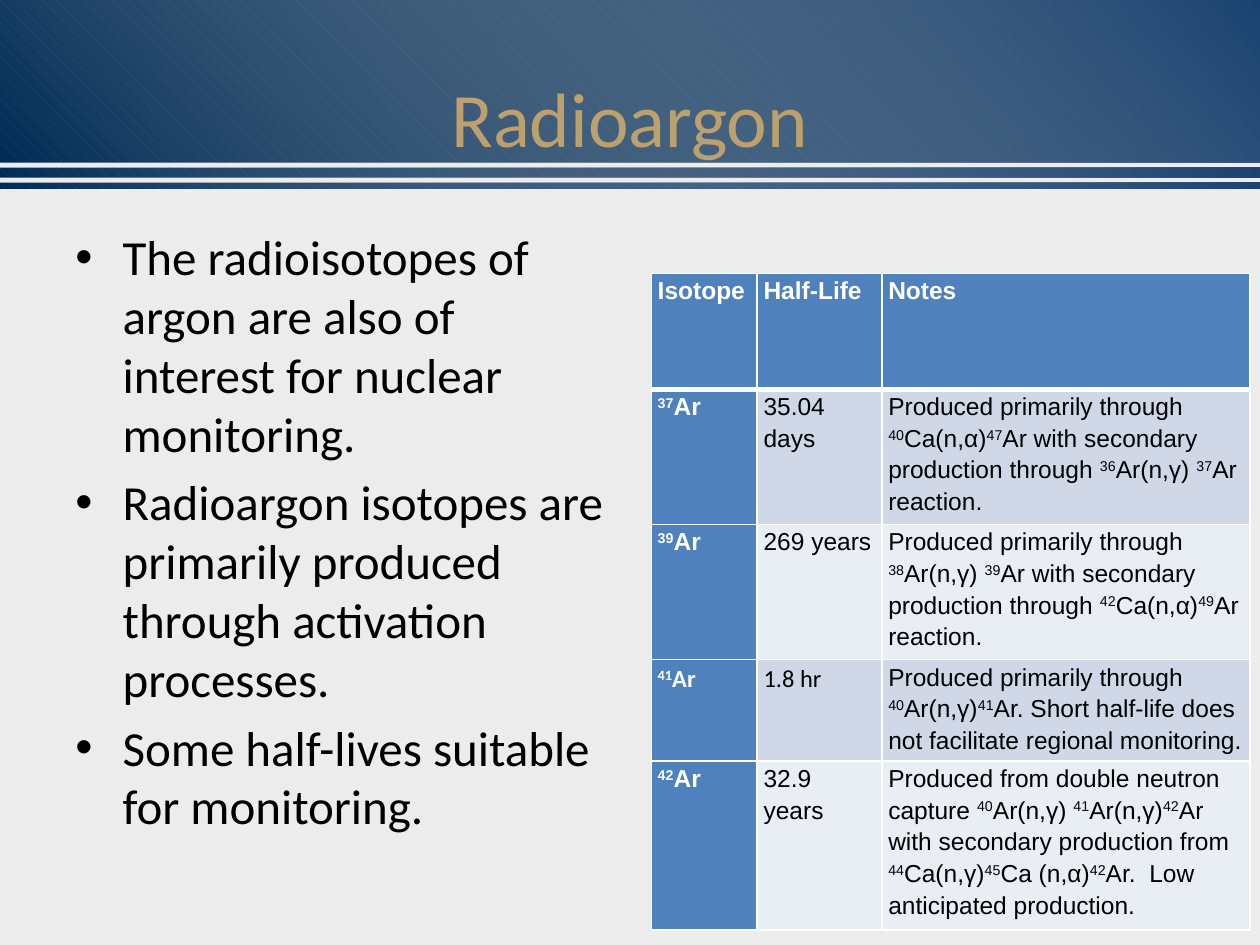
"""Builds the Radioargon slide: banded header, bullet list and isotope table."""
from lxml.etree import SubElement
from pptx import Presentation
from pptx.dml.color import RGBColor
from pptx.enum.dml import MSO_PATTERN
from pptx.enum.shapes import MSO_SHAPE
from pptx.enum.text import MSO_ANCHOR, PP_ALIGN
from pptx.oxml.ns import qn
from pptx.util import Inches, Pt

NAVY = RGBColor(0x00, 0x2B, 0x55)
BLUE = RGBColor(0x1C, 0x43, 0x72)
CREAM = RGBColor(0xEE, 0xEC, 0xE1)
GOLD = RGBColor(0xBC, 0xA0, 0x6E)
BLACK = RGBColor(0x00, 0x00, 0x00)
WHITE = RGBColor(0xFF, 0xFF, 0xFF)
HEADER_BLUE = RGBColor(0x4F, 0x81, 0xBD)
BAND_COLORS = [RGBColor(0xE9, 0xED, 0xF4), RGBColor(0xD0, 0xD8, 0xE8)]
PAPER = RGBColor(0xEC, 0xEC, 0xEC)
PAPER_LINE = RGBColor(0xF2, 0xF2, 0xF2)

presentation = Presentation()
presentation.slide_width = Inches(10)
presentation.slide_height = Inches(7.5)
COLUMN = presentation.slide_width / 100
ROW = presentation.slide_height / 75
slide = presentation.slides.add_slide(presentation.slide_layouts[6])


def set_pattern(fill, pattern, front, back):
    fill.patterned()
    fill.pattern = pattern
    fill.fore_color.rgb = front
    fill.back_color.rgb = back


def add_text_box(left, top, width, height, lines, size, color):
    box = slide.shapes.add_textbox(
        int(left * COLUMN), int(top * ROW), int(width * COLUMN), int(height * ROW))
    frame = box.text_frame
    frame.word_wrap = True
    frame.text = "\n".join(lines)
    for paragraph in frame.paragraphs:
        font = paragraph.runs[0].font
        font.name = "Calibri"
        font.size = Pt(size)
        font.color.rgb = color
    return frame


set_pattern(slide.background.fill, MSO_PATTERN.WIDE_UPWARD_DIAGONAL, PAPER_LINE, PAPER)

for band_top, band_height in [(0, 12.9), (13.3, 0.8), (14.5, 0.5)]:
    width, height = int(100 * COLUMN), int(band_height * ROW)
    top = int(band_top * ROW)
    band = slide.shapes.add_shape(MSO_SHAPE.RECTANGLE, 0, top, width, height)
    set_pattern(band.fill, MSO_PATTERN.SHINGLE, BLUE, NAVY)
    sheen = slide.shapes.add_shape(
        MSO_SHAPE.RECTANGLE, (width - height) // 2, top + (height - width) // 2, height, width)
    sheen.rotation = 90
    sheen.fill.gradient()
    sheen.fill.gradient_angle = 130
    for stop, color in zip(sheen.fill.gradient_stops, [CREAM, BLUE]):
        stop.color.rgb = color
    clear_color = next(sheen._element.spPr.iter(qn("a:srgbClr")))
    SubElement(clear_color, qn("a:alpha"), val="0")
    for shape in (band, sheen):
        shape.line.fill.background()
        shape.shadow.inherit = False

title = add_text_box(5, 3, 90, 12.5, ["Radioargon"], 44, GOLD)
title.vertical_anchor = MSO_ANCHOR.MIDDLE
title.paragraphs[0].alignment = PP_ALIGN.CENTER

body = add_text_box(5, 17.5, 44.2, 49.5, [
    "The radioisotopes of argon are also of interest for nuclear monitoring.",
    "Radioargon isotopes are primarily produced through activation processes.",
    "Some half-lives suitable for monitoring.",
], 28, BLACK)
for index, paragraph in enumerate(body.paragraphs):
    paragraph.space_before = Pt(5.6 if index else 0)
    properties = paragraph._p.get_or_add_pPr()
    properties.set("marL", str(int(3.75 * COLUMN)))
    properties.set("indent", str(int(-3.75 * COLUMN)))
    SubElement(properties, qn("a:buFont"), typeface="Arial")
    SubElement(properties, qn("a:buChar"), char="•")

ISOTOPES = [
    ("Isotope", "Half-Life", "Notes"),
    ("^37^Ar", "35.04 days",
     "Produced primarily through ^40^Ca(n,α)^47^Ar with secondary production "
     "through ^36^Ar(n,γ) ^37^Ar reaction."),
    ("^39^Ar", "269 years",
     "Produced primarily through ^38^Ar(n,γ) ^39^Ar with secondary production "
     "through ^42^Ca(n,α)^49^Ar reaction."),
    ("^41^Ar", "1.8 hr",
     "Produced primarily through ^40^Ar(n,γ)^41^Ar. Short half-life does not "
     "facilitate regional monitoring."),
    ("^42^Ar", "32.9 years",
     "Produced from double neutron capture ^40^Ar(n,γ) ^41^Ar(n,γ)^42^Ar with "
     "secondary production from ^44^Ca(n,γ)^45^Ca (n,α)^42^Ar.  Low anticipated production."),
]
CALIBRI_CELLS = {(3, 0), (3, 1)}
column_widths = [8.4, 9.9, 29.2]
row_heights = [9.2, 6, 6, 7.5, 7.5]

table = slide.shapes.add_table(
    len(row_heights), len(column_widths), int(51.7 * COLUMN), int(21.7 * ROW),
    int(sum(column_widths) * COLUMN), int(sum(row_heights) * ROW)).table
table.horz_banding = False
for table_column, width in zip(table.columns, column_widths):
    table_column.width = int(width * COLUMN)
for table_row, height in zip(table.rows, row_heights):
    table_row.height = int(height * ROW)

for row_index, texts in enumerate(ISOTOPES):
    for column_index, text in enumerate(texts):
        cell = table.cell(row_index, column_index)
        is_heading = row_index == 0 or column_index == 0
        cell.margin_left = cell.margin_right = int(0.5 * COLUMN)
        cell.margin_top = cell.margin_bottom = 0
        for side in ("lnL", "lnR", "lnT", "lnB"):
            is_thick = (row_index, side) in {(0, "lnB"), (1, "lnT")}
            border = SubElement(cell._tc.get_or_add_tcPr(), qn(f"a:{side}"),
                                w=str(Pt(3 if is_thick else 1)))
            border_fill = SubElement(border, qn("a:solidFill"))
            SubElement(border_fill, qn("a:srgbClr"), val=str(WHITE))
        cell.fill.solid()
        cell.fill.fore_color.rgb = HEADER_BLUE if is_heading else BAND_COLORS[row_index % 2]
        paragraph = cell.text_frame.paragraphs[0]
        paragraph.line_spacing = 1.15
        for part_index, part in enumerate(text.split("^")):
            if not part:
                continue
            run = paragraph.add_run()
            run.text = part
            font = run.font
            font.name = "Calibri" if (row_index, column_index) in CALIBRI_CELLS else "Arial"
            font.size = Pt(14)
            font.bold = is_heading
            font.color.rgb = WHITE if is_heading else BLACK
            if part_index % 2:
                run._r.get_or_add_rPr().set("baseline", "30000")

presentation.save("out.pptx")
